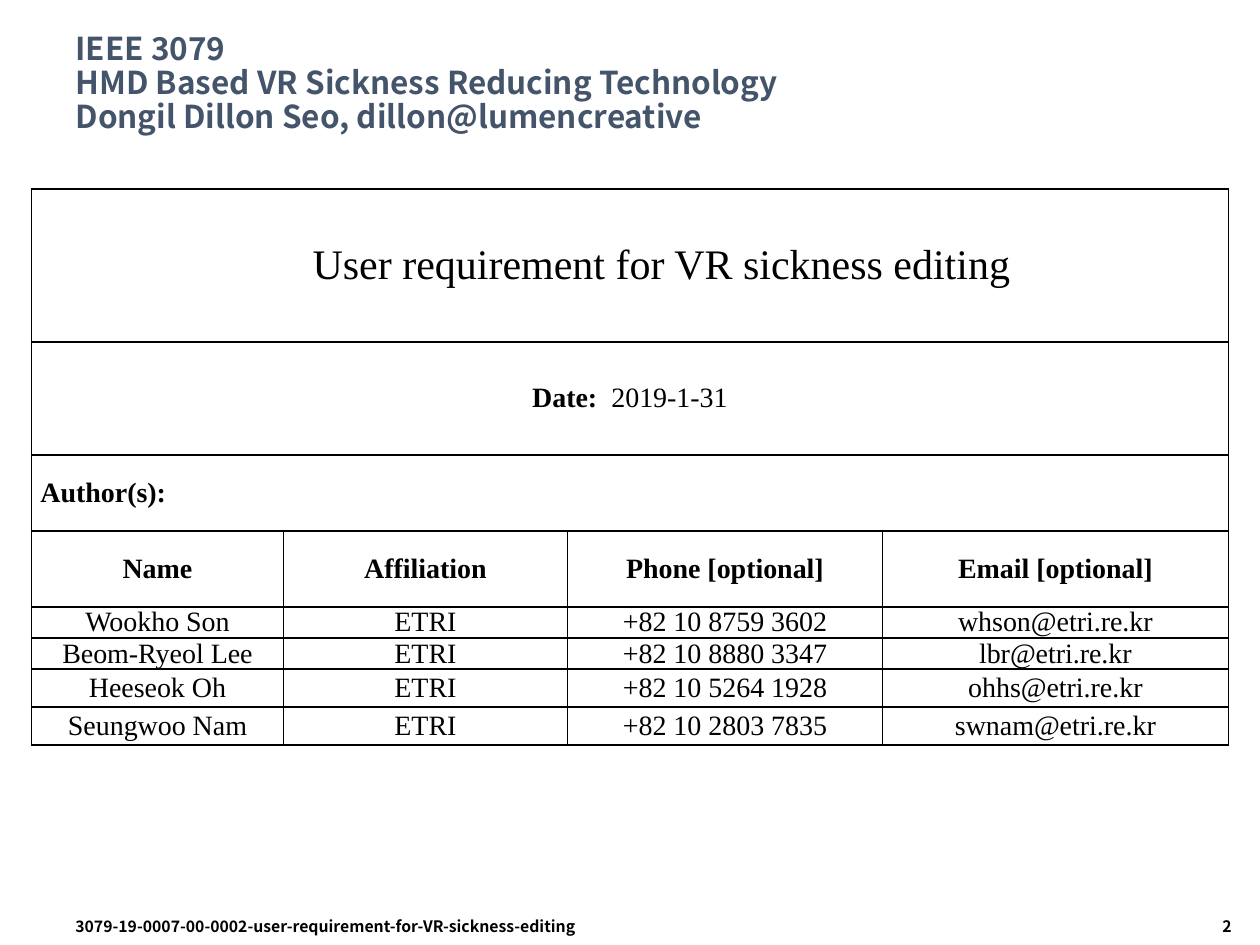
from copy import deepcopy

from lxml.etree import SubElement
from pptx import Presentation
from pptx.dml.color import RGBColor
from pptx.enum.text import MSO_ANCHOR as Anchor, PP_ALIGN as Align
from pptx.oxml.ns import qn
from pptx.util import Pt

PX = 914400 / 126
COLORS = {"head": "44546A", "ink": "000000"}
SANS, SERIF = "Noto Sans CJK KR", "Times New Roman"

HEAD = ["IEEE 3079", "HMD Based VR Sickness Reducing Technology",
        "Dongil Dillon Seo, dillon@lumencreative"]
# Wide rows: runs of (text, bold), size, alignment, left margin, space after
WIDE = [
    ([("User requirement for VR sickness editing", False)], 24, Align.CENTER, 63, 12),
    ([("Date:  ", True), ("2019-1-31", False)], 16, Align.CENTER, 0, 12),
    ([("Author(s):", True)], 16, Align.LEFT, 0, 0),
]
PEOPLE = [
    ("Name", "Affiliation", "Phone [optional]", "Email [optional]"),
    ("Wookho Son", "ETRI", "+82 10 8759 3602", "whson@etri.re.kr"),
    ("Beom-Ryeol Lee", "ETRI", "+82 10 8880 3347", "lbr@etri.re.kr"),
    ("Heeseok Oh", "ETRI", "+82 10 5264 1928", "ohhs@etri.re.kr"),
    ("Seungwoo Nam", "ETRI", "+82 10 2803 7835", "swnam@etri.re.kr"),
]
COLS = [252, 284, 315, 346]
ROWS = [153, 113, 76, 76, 19, 19, 38, 38]
FOOT = [
    ("3079-19-0007-00-0002-user-requirement-for-VR-sickness-editing",
     (63, 911, 977, 34), Align.LEFT),
    ("2", (1040, 911, 204, 34), Align.RIGHT),
]


def px(n):
    return round(n * PX)


def place(shape, box):
    for key, n in zip(("left", "top", "width", "height"), box):
        setattr(shape, key, px(n))


def add_run(para, text, size, face, bold, color="ink"):
    run = para.add_run()
    run.text = text
    style = {"size": Pt(size), "name": face, "bold": bold}
    for key, value in style.items():
        setattr(run.font, key, value)
    run.font.color.rgb = RGBColor.from_string(COLORS[color])
    return run


def frame(cell):
    """Give a cell thin black borders, no fill and tight margins."""
    props = cell._tc.get_or_add_tcPr()
    for side in "LRTB":
        line = SubElement(props, qn(f"a:ln{side}"), w=str(Pt(1)))
        fill = SubElement(line, qn("a:solidFill"))
        SubElement(fill, qn("a:srgbClr"), val=COLORS["ink"])
    cell.fill.background()
    look = {"margin_left": px(9), "margin_right": px(9), "margin_top": 0,
            "margin_bottom": 0, "vertical_anchor": Anchor.MIDDLE}
    for key, value in look.items():
        setattr(cell, key, value)


def write(cell, runs, size=16, align=Align.CENTER, indent=0, after=0):
    para = cell.text_frame.paragraphs[0]
    para.alignment = align
    para.space_after = Pt(after)
    if indent:
        para._p.get_or_add_pPr().set("marL", str(px(indent)))
    for text, bold in runs:
        add_run(para, text, size, SERIF, bold)


def add_head(slide):
    title = slide.shapes.title
    place(title, (63, 21, 1134, 126))
    title.text_frame.vertical_anchor = Anchor.MIDDLE
    para = title.text_frame.paragraphs[0]
    para.alignment = Align.LEFT
    para.line_spacing = 0.9
    for i, text in enumerate(HEAD):
        if i:
            para.add_line_break()
        run = add_run(para, text, 18, SANS, True, "head")
    # Line breaks need the run's size too, or they stretch the lines
    for br in para._p.findall(qn("a:br")):
        br.append(deepcopy(run.font._rPr))


def add_grid(slide):
    box = [px(n) for n in (31.5, 189, sum(COLS), sum(ROWS))]
    table = slide.shapes.add_table(len(ROWS), len(COLS), *box).table
    table.first_row = table.horz_banding = False
    for col, n in zip(table.columns, COLS):
        col.width = px(n)
    for row, n in zip(table.rows, ROWS):
        row.height = px(n)
    for cell in table.iter_cells():
        frame(cell)
    for r, item in enumerate(WIDE):
        table.cell(r, 0).merge(table.cell(r, len(COLS) - 1))
        write(table.cell(r, 0), *item)
    for r, person in enumerate(PEOPLE):
        for c, text in enumerate(person):
            write(table.cell(len(WIDE) + r, c), [(text, r == 0)])


def add_foot(slide):
    for text, box, align in FOOT:
        note = slide.shapes.add_textbox(*[px(n) for n in box]).text_frame
        note.word_wrap = True
        note.paragraphs[0].alignment = align
        add_run(note.paragraphs[0], text, 9, SANS, True)


def main():
    deck = Presentation()
    deck.slide_width, deck.slide_height = px(1260), px(945)
    slide = deck.slides.add_slide(deck.slide_layouts[5])
    add_grid(slide)
    add_head(slide)
    add_foot(slide)
    deck.save("out.pptx")


if __name__ == "__main__":
    main()
